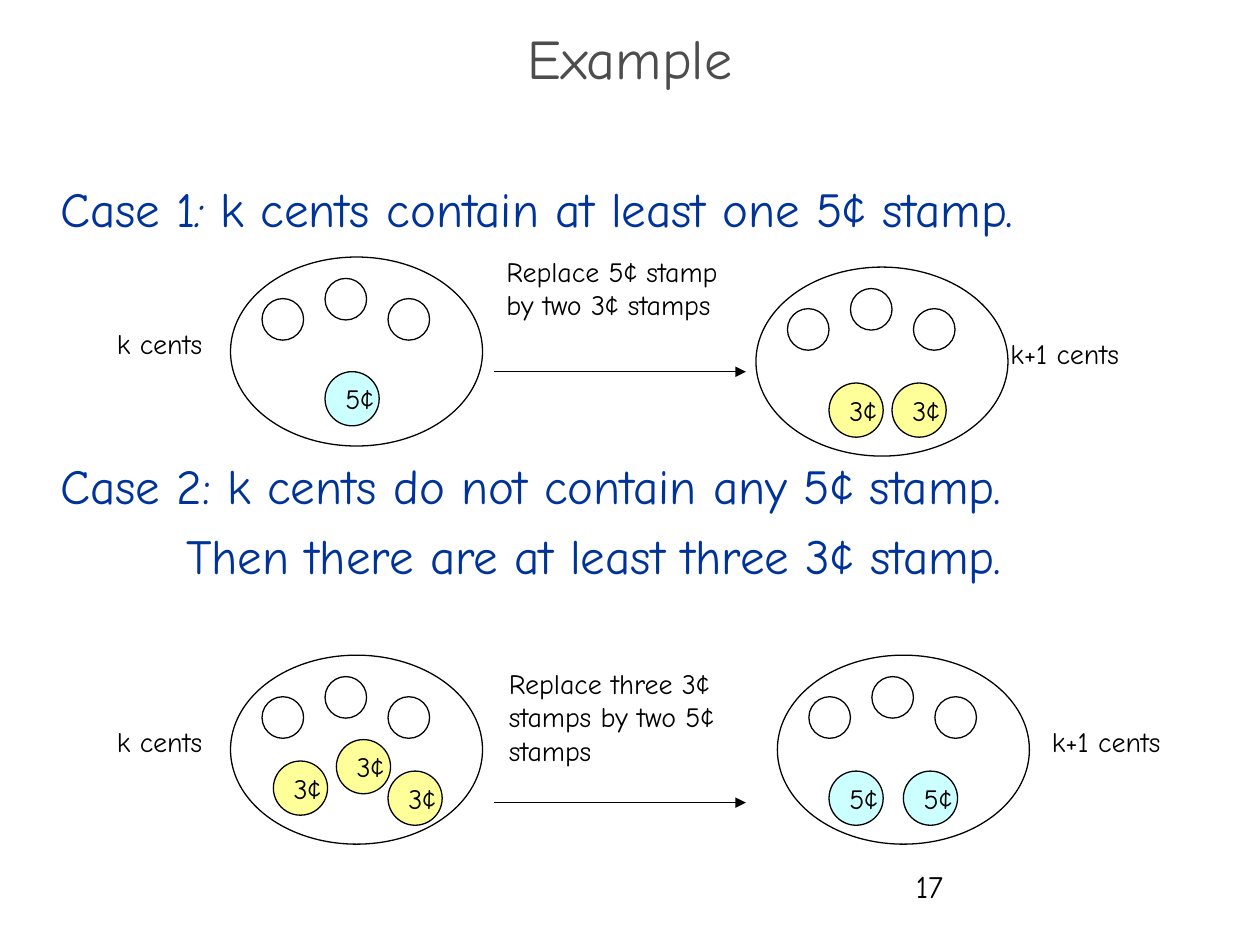
import pptx
import pptx.util
import pptx.dml.color
import pptx.enum.shapes
import pptx.enum.text
import pptx.oxml.ns
import lxml.etree

Inches = pptx.util.Inches
Pt = pptx.util.Pt
ALIGN = pptx.enum.text.PP_ALIGN
ANCHOR = pptx.enum.text.MSO_ANCHOR
OVAL = pptx.enum.shapes.MSO_SHAPE.OVAL
STRAIGHT = pptx.enum.shapes.MSO_CONNECTOR.STRAIGHT

FONT = "Comic Neue"
BLACK, WHITE, BLUE, GREY = "000000", "FFFFFF", "003399", "4D4D4D"
STAMP_FILLS = {"3¢": "FFFF99", "5¢": "CCFFFF"}
BLANK_STAMPS = [(0.25, 0.33), (0.75, 0.17), (1.25, 0.33)]
POT_SIZE = (2, 1.5)
BLANK_SIZE = (0.33, 0.33)
STAMP_SIZE = (0.43, 0.43)

HEADINGS = [
    ([("Case 1", False), (": ", True), ("k cents contain at least one 5¢ stamp.", False)], 0.38, 0),
    ([("Case 2: k cents do not contain any 5¢ stamp.", False)], 0.38, 124.4),
    ([("Then there are at least three 3¢ stamp.", False)], 1.38, 6.5),
]

CASES = [
    {
        "pots": [
            ((1.83, 2.04), [("5¢", 0.75, 0.91)]),
            ((6, 2.12), [("3¢", 0.58, 0.92), ("3¢", 1.08, 0.92)]),
        ],
        "arrow": (3.92, 2.95, 2),
        "labels": [
            ("Replace 5¢ stamp by two 3¢ stamps", (3.92, 1.97, 2, 1.01)),
            ("k cents", (0.83, 2.54, 1.08, 0.4)),
            ("k+1 cents", (7.92, 2.62, 1.5, 0.4)),
        ],
    },
    {
        "pots": [
            ((1.83, 5.2), [("3¢", 0.34, 0.84), ("3¢", 0.84, 0.67), ("3¢", 1.25, 0.92)]),
            ((6.17, 5.2), [("5¢", 0.41, 0.92), ("5¢", 1, 0.92)]),
        ],
        "arrow": (3.92, 6.37, 2),
        "labels": [
            ("Replace three 3¢ stamps by two 5¢ stamps", (3.94, 5.24, 2, 1)),
            ("k cents", (0.83, 5.7, 1.08, 0.4)),
            ("k+1 cents", (8.25, 5.7, 1.33, 0.4)),
        ],
    },
]


def set_color(color_format, value):
    color_format.rgb = pptx.dml.color.RGBColor.from_string(value)


def set_values(target, values):
    for name, value in values.items():
        setattr(target, name, value)


def add_run(paragraph, text, size, color=BLACK, italic=False):
    run = paragraph.add_run()
    run.text = text
    set_values(run.font, {"name": FONT, "size": Pt(size), "italic": italic})
    set_color(run.font.color, color)


def add_text_frame(slide, box):
    text_frame = slide.shapes.add_textbox(*map(Inches, box)).text_frame
    text_frame.word_wrap = True
    return text_frame


def add_label(slide, text, box, size=16):
    paragraph = add_text_frame(slide, box).paragraphs[0]
    add_run(paragraph, text, size)


def add_title(slide, box):
    text_frame = add_text_frame(slide, box)
    text_frame.vertical_anchor = ANCHOR.MIDDLE
    paragraph = text_frame.paragraphs[0]
    set_values(paragraph, {"alignment": ALIGN.CENTER, "line_spacing": 0.7})
    add_run(paragraph, "Example", 32, GREY)


def add_headings(slide, box):
    text_frame = add_text_frame(slide, box)
    for index, (runs, indent, space_before) in enumerate(HEADINGS):
        paragraph = text_frame.add_paragraph() if index else text_frame.paragraphs[0]
        paragraph.space_before = Pt(space_before)
        paragraph._p.get_or_add_pPr().set("marL", str(Inches(indent)))
        for text, italic in runs:
            add_run(paragraph, text, 28, BLUE, italic)


def add_oval(slide, left, top, size, fill=WHITE):
    shape = slide.shapes.add_shape(OVAL, *map(Inches, (left, top, *size)))
    shape.shadow.inherit = False
    shape.fill.solid()
    set_color(shape.fill.fore_color, fill)
    set_color(shape.line.color, BLACK)
    shape.line.width = Pt(0.75)
    return shape


def add_pot(slide, corner, stamps):
    left, top = corner
    add_oval(slide, left, top, POT_SIZE)
    for across, down in BLANK_STAMPS:
        add_oval(slide, left + across, top + down, BLANK_SIZE)
    for value, across, down in stamps:
        shape = add_oval(slide, left + across, top + down, STAMP_SIZE, STAMP_FILLS[value])
        set_values(shape.text_frame, {"word_wrap": False, "vertical_anchor": ANCHOR.MIDDLE})
        paragraph = shape.text_frame.paragraphs[0]
        paragraph.alignment = ALIGN.LEFT
        add_run(paragraph, value, 16)


def add_arrow(slide, left, top, length):
    connector = slide.shapes.add_connector(
        STRAIGHT, Inches(left), Inches(top), Inches(left + length), Inches(top)
    )
    connector.line.width = Pt(0.75)
    set_color(connector.line.color, BLACK)
    qn = pptx.oxml.ns.qn
    line = connector.line._get_or_add_ln()
    lxml.etree.SubElement(line, qn("a:tailEnd"), type="triangle")
    lxml.etree.SubElement(connector._element.spPr, qn("a:effectLst"))


def add_case(slide, case):
    for corner, stamps in case["pots"]:
        add_pot(slide, corner, stamps)
    add_arrow(slide, *case["arrow"])
    for text, box in case["labels"]:
        add_label(slide, text, box)


def main():
    presentation = pptx.Presentation()
    set_values(presentation, {"slide_width": Inches(10), "slide_height": Inches(7.5)})
    slide = presentation.slides.add_slide(presentation.slide_layouts[6])
    add_title(slide, (0, 0.27, 10, 0.5))
    add_label(slide, "17", (7.17, 6.83, 2.33, 0.5), 18)
    add_headings(slide, (0, 1.37, 10, 5.75))
    for case in CASES:
        add_case(slide, case)
    presentation.save("out.pptx")


if __name__ == "__main__":
    main()
